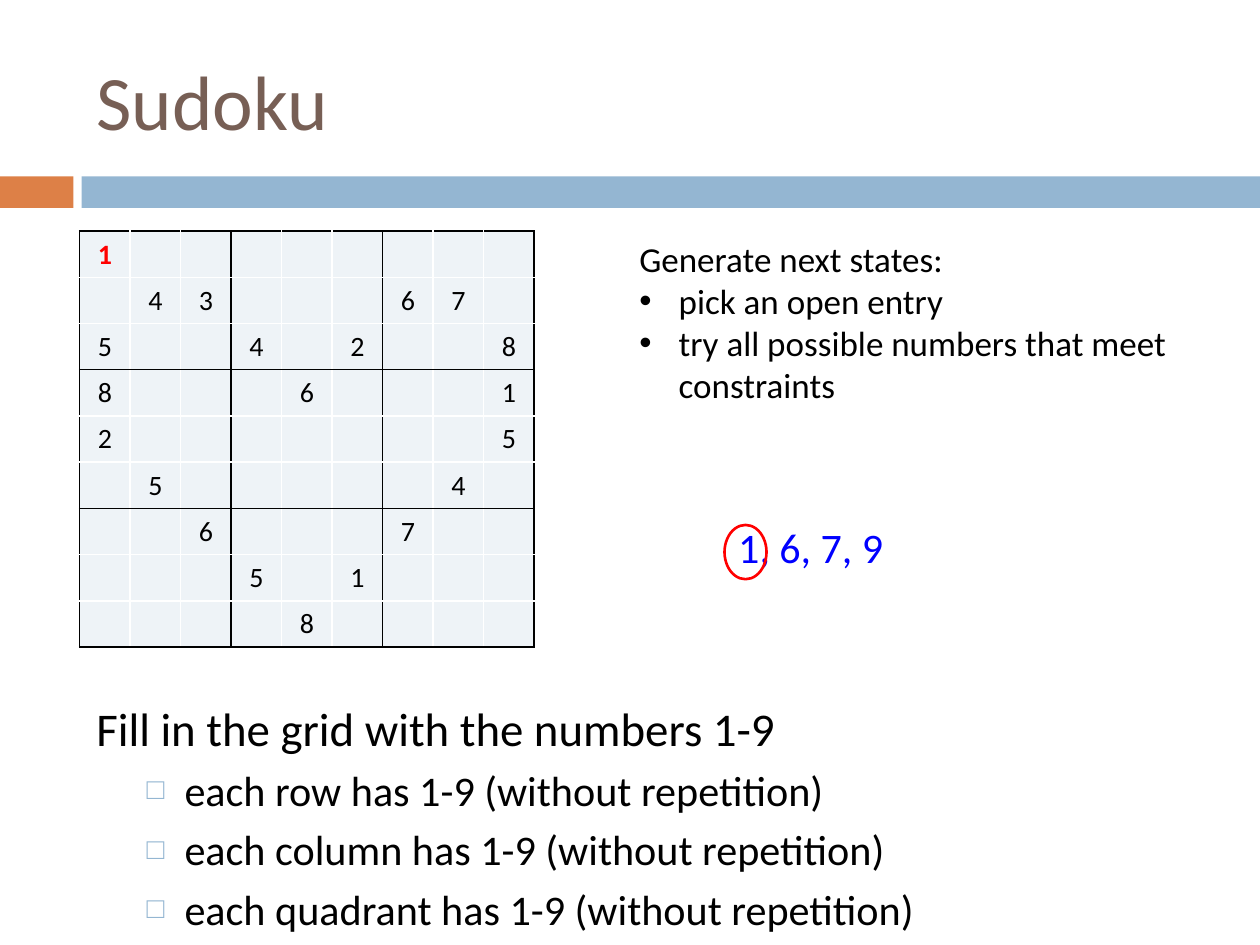
from dataclasses import dataclass

from lxml.etree import SubElement
from pptx import Presentation
from pptx.dml.color import RGBColor
from pptx.enum.shapes import MSO_SHAPE
from pptx.enum.text import MSO_ANCHOR, PP_ALIGN
from pptx.oxml.ns import qn
from pptx.util import Pt

FONT = "Calibri"
COLORS = {
    "orange": "DD8047", "blue": "94B6D2", "title": "775F55",
    "black": "000000", "white": "FFFFFF", "cell": "EEF3F7",
    "red": "FF0000", "options": "0000FF",
}
# Dots are open entries
GRID = [
    "1........",
    ".43...67.",
    "5..4.2..8",
    "8...6...1",
    "2.......5",
    ".5.....4.",
    "..6...7..",
    "...5.1...",
    "....8....",
]
QUADRANT = 3
COLUMN_WIDTH, ROW_HEIGHT = 28.88, 26.4


@dataclass
class Box:
    left: float
    top: float
    width: float
    height: float

    def lengths(self) -> tuple:
        return Pt(self.left), Pt(self.top), Pt(self.width), Pt(self.height)


@dataclass
class Line:
    text: str
    size: float
    color: str = "black"
    bullet: str = ""
    indent: float = 0
    hanging: float = 0
    before: float = 0
    bullet_color: str = "black"
    bullet_percent: int = 100


def rgb(name: str) -> RGBColor:
    return RGBColor.from_string(COLORS[name])


def style(font, size: float, color: str, bold: bool = False) -> None:
    font.name, font.size, font.bold = FONT, Pt(size), bold
    font.color.rgb = rgb(color)


def add_bullet(paragraph, line: Line) -> None:
    props = paragraph._p.get_or_add_pPr()
    props.set("marL", str(Pt(line.indent)))
    props.set("indent", str(-Pt(line.hanging)))
    color = SubElement(props, qn("a:buClr"))
    SubElement(color, qn("a:srgbClr"), val=COLORS[line.bullet_color])
    SubElement(props, qn("a:buSzPct"), val=str(line.bullet_percent * 1000))
    SubElement(props, qn("a:buFont"), typeface="Arial")
    SubElement(props, qn("a:buChar"), char=line.bullet)


def add_text(slide, box: Box, lines: list[Line], wrap: bool = True,
             anchor: MSO_ANCHOR = MSO_ANCHOR.TOP) -> None:
    frame = slide.shapes.add_textbox(*box.lengths()).text_frame
    frame.word_wrap, frame.vertical_anchor = wrap, anchor
    frame.text = "\n".join(line.text for line in lines)
    for paragraph, line in zip(frame.paragraphs, lines):
        paragraph.space_before = Pt(line.before)
        if line.bullet:
            add_bullet(paragraph, line)
        style(paragraph.runs[0].font, line.size, line.color)


def add_bar(slide, box: Box, color: str) -> None:
    bar = slide.shapes.add_shape(MSO_SHAPE.RECTANGLE, *box.lengths())
    bar.shadow.inherit = False
    bar.fill.solid()
    bar.fill.fore_color.rgb = rgb(color)
    bar.line.fill.background()


def add_borders(cell, row: int, column: int) -> None:
    """Black along quadrant edges, white between other entries."""
    props = cell._tc.get_or_add_tcPr()
    edges = {"a:lnL": column, "a:lnR": column + 1, "a:lnT": row, "a:lnB": row + 1}
    for position, (tag, edge) in enumerate(edges.items()):
        border = props.makeelement(qn(tag), {"w": str(Pt(1))})
        props.insert(position, border)
        fill = SubElement(border, qn("a:solidFill"))
        color = "white" if edge % QUADRANT else "black"
        SubElement(fill, qn("a:srgbClr"), val=COLORS[color])


def add_sudoku(slide, left: float, top: float) -> None:
    count = len(GRID)
    box = Box(left, top, COLUMN_WIDTH * count, ROW_HEIGHT * count)
    table = slide.shapes.add_table(count, count, *box.lengths()).table
    table.first_row = table.horz_banding = False
    for index in range(count):
        table.columns[index].width = Pt(COLUMN_WIDTH)
        table.rows[index].height = Pt(ROW_HEIGHT)
    for row, entries in enumerate(GRID):
        for column, entry in enumerate(entries):
            cell = table.cell(row, column)
            cell.fill.solid()
            cell.fill.fore_color.rgb = rgb("cell")
            cell.margin_left = cell.margin_right = Pt(7.2)
            cell.margin_top = cell.margin_bottom = Pt(3.6)
            add_borders(cell, row, column)
            paragraph = cell.text_frame.paragraphs[0]
            paragraph.alignment = PP_ALIGN.CENTER
            if entry == ".":
                # Keeps open entries from stretching the row
                SubElement(paragraph._p, qn("a:endParaRPr"), sz="1600")
                continue
            paragraph.text = entry
            tried = row == column == 0
            style(paragraph.runs[0].font, 16, "red" if tried else "black", tried)


def main() -> None:
    deck = Presentation()
    deck.slide_width, deck.slide_height = Pt(720), Pt(540)
    slide = deck.slides.add_slide(deck.slide_layouts[6])

    # Title and its bars
    add_bar(slide, Box(0, 100.8, 42, 18), "orange")
    add_bar(slide, Box(46.6, 100.8, 673.4, 18), "blue")
    add_text(slide, Box(48, 18, 642, 78), [Line("Sudoku", 44, "title")],
             anchor=MSO_ANCHOR.MIDDLE)

    # Puzzle
    add_sudoku(slide, 45.5, 132)

    # Rules
    rules = [Line("Fill in the grid with the numbers 1-9", 26.8)]
    rules += [
        Line(f"each {unit} has 1-9 (without repetition)", 24.1, bullet="□",
             indent=50.4, hanging=21.6, before=5,
             bullet_color="blue", bullet_percent=70)
        for unit in ("row", "column", "quadrant")
    ]
    add_text(slide, Box(48, 396, 642, 126), rules)

    # Next states
    steps = [Line("Generate next states:", 20)]
    steps += [
        Line(step, 20, bullet="•", indent=22.5, hanging=22.5)
        for step in ("pick an open entry",
                     "try all possible numbers that meet constraints")
    ]
    add_text(slide, Box(358.2, 132, 350, 152.6), steps)

    # Possible numbers, with the one being tried circled
    add_text(slide, Box(414.8, 294.5, 103.7, 36),
             [Line("1, 6, 7, 9", 24, "options")], wrap=False)
    circle = slide.shapes.add_shape(MSO_SHAPE.OVAL,
                                    *Box(414, 300, 24, 31).lengths())
    circle.shadow.inherit = False
    circle.fill.background()
    circle.line.color.rgb = rgb("red")
    circle.line.width = Pt(1.5)

    deck.save("out.pptx")


if __name__ == "__main__":
    main()
